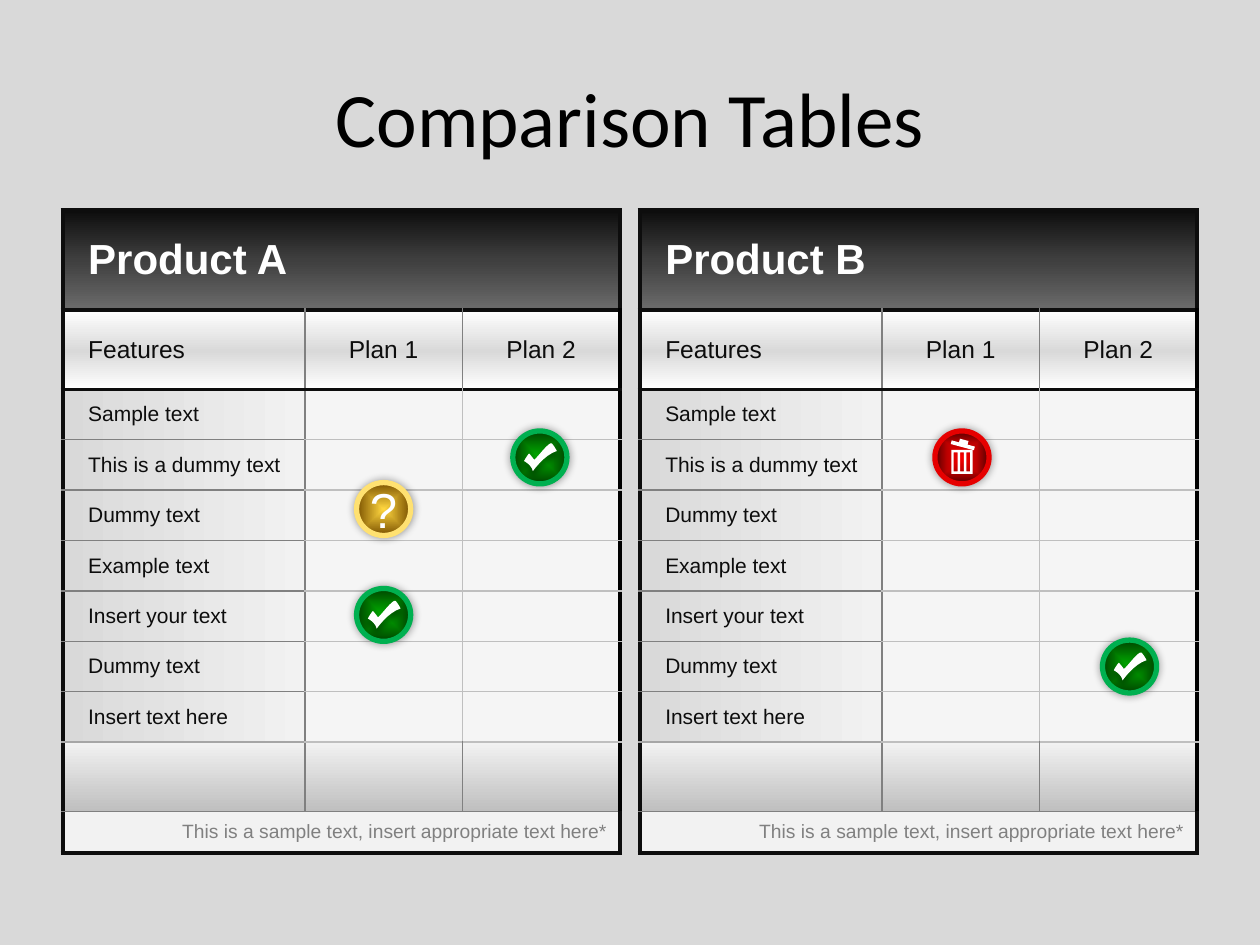
from dataclasses import dataclass
from typing import Any, NamedTuple

from lxml.etree import SubElement
from pptx import Presentation
from pptx.dml.color import RGBColor
from pptx.enum.shapes import MSO_SHAPE
from pptx.enum.text import MSO_ANCHOR, PP_ALIGN
from pptx.oxml import parse_xml
from pptx.oxml.ns import nsdecls, qn
from pptx.util import Inches, Pt


class Line(NamedTuple):
    color: str
    width: float


class Gradient(NamedTuple):
    stops: tuple
    angle: int | None = None  # None spreads from the centre


@dataclass(frozen=True)
class Theme:
    background: str = "D9D9D9"
    white: str = "FFFFFF"
    black: str = "000000"
    ink: str = "0D0D0D"
    gray: str = "808080"
    silver: str = "BFBFBF"
    plan_cell: str = "F5F5F5"
    footer: str = "F2F2F2"
    title_font: str = "Calibri"
    body_font: str = "Arial"
    title_size: int = 44
    product_size: int = 24
    heading_size: int = 14
    feature_size: int = 12
    note_size: int = 11
    mark_size: int = 28
    product: Gradient = Gradient(((0, "0D0D0D"), (50, "3F3F3F"), (100, "6B6B6B")), 90)
    heading: Gradient = Gradient(((0, "FFFFFF"), (52, "D9D9D9"), (100, "FFFFFF")), 90)
    feature: Gradient = Gradient(((0, "D9D9D9"), (100, "F2F2F2")), 0)
    summary: Gradient = Gradient(((0, "BFBFBF"), (100, "F2F2F2")), 270)


THEME = Theme()


class BadgeStyle(NamedTuple):
    fill: Gradient
    ring: str


class Badge(NamedTuple):
    kind: str
    left: float
    top: float


BADGE_STYLES = {
    "check": BadgeStyle(Gradient(((0, "00B000"), (100, "004300"))), "00B050"),
    "question": BadgeStyle(Gradient(((0, "FFD63F"), (100, "7A5100"))), "FFE171"),
    "trash": BadgeStyle(Gradient(((0, "FA0000"), (53, "BD0000"), (100, "540000"))), "E60000"),
}
BADGES = [Badge("trash", 7.42, 3.42), Badge("check", 2.83, 4.67), Badge("question", 2.83, 3.83),
          Badge("check", 4.07, 3.42), Badge("check", 8.75, 5.08)]
FEATURES = ["Sample text", "This is a dummy text", "Dummy text", "Example text",
            "Insert your text", "Dummy text", "Insert text here"]
NOTE = "This is a sample text, insert appropriate text here*"
COLUMN_WIDTHS = [1.92, 1.25, 1.25]
ROW_HEIGHTS = [0.79, 0.63] + [0.4] * len(FEATURES) + [0.55, 0.33]
LAST_ROW = len(ROW_HEIGHTS) - 1
SUMMARY_ROW = LAST_ROW - 1

# Outlines in inches from the badge corner; each curve is two controls and an end
CHECK_START = (0.09, 0.24)
CHECK_CURVES = [((0.09, 0.24), (0.15, 0.27), (0.16, 0.32)), ((0.16, 0.32), (0.25, 0.19), (0.35, 0.16)),
                ((0.35, 0.16), (0.33, 0.12), (0.31, 0.10)), ((0.29, 0.08), (0.19, 0.22), (0.17, 0.23)),
                ((0.17, 0.23), (0.15, 0.20), (0.13, 0.18)), ((0.13, 0.18), (0.11, 0.20), (0.09, 0.24))]
BIN_LID = [(0.13, 0.10), (0.19, 0.10), (0.19, 0.07), (0.26, 0.07),
           (0.26, 0.10), (0.32, 0.10), (0.32, 0.13), (0.13, 0.13)]


def apply_format(target: Any, values: dict) -> None:
    for name, value in values.items():
        setattr(target, name, value)


def fill_element(fill: str | Gradient):
    if isinstance(fill, str):
        return parse_xml(f'<a:solidFill {nsdecls("a")}><a:srgbClr val="{fill}"/></a:solidFill>')
    stops = "".join(f'<a:gs pos="{position * 1000}"><a:srgbClr val="{color}"/></a:gs>'
                    for position, color in fill.stops)
    if fill.angle is None:
        shade = '<a:path path="shape"><a:fillToRect l="50000" t="50000" r="50000" b="50000"/></a:path>'
    else:
        shade = f'<a:lin ang="{fill.angle * 60000}" scaled="0"/>'
    return parse_xml(f'<a:gradFill {nsdecls("a")} rotWithShape="1"><a:gsLst>{stops}</a:gsLst>{shade}</a:gradFill>')


def add_shadow(shape: Any, blur: float, distance: float, angle: int) -> None:
    shape.shadow.inherit = False
    effects = shape._element.spPr.find(qn("a:effectLst"))
    effects.append(parse_xml(
        f'<a:outerShdw {nsdecls("a")} blurRad="{Pt(blur)}" dist="{Pt(distance)}" dir="{angle * 60000}" '
        f'algn="ctr" rotWithShape="0"><a:srgbClr val="{THEME.black}"><a:alpha val="40000"/>'
        '</a:srgbClr></a:outerShdw>'))


def write_text(frame: Any, text: str, size: int, color: str, align=PP_ALIGN.LEFT,
               font: str = THEME.body_font, bold: bool = False) -> None:
    para = frame.paragraphs[0]
    para.alignment = align
    span = para.add_run()
    span.text = text
    apply_format(span.font, {"name": font, "size": Pt(size), "bold": bold})
    span.font.color.rgb = RGBColor.from_string(color)


def horizontal_line(edge: int, column: int) -> Line:
    """Rule above the row with this number."""
    if edge in (0, LAST_ROW + 1):
        return Line(THEME.ink, 3)
    if edge <= 2:
        return Line(THEME.ink, 2.25)
    if edge == LAST_ROW:
        return Line(THEME.gray, 1)
    if column > 0:
        return Line(THEME.silver, 1)
    return Line("A6A6A6" if edge == SUMMARY_ROW else THEME.gray, 1)


def vertical_line(edge: int, row: int) -> Line:
    """Rule left of the column with this number."""
    if edge == 0 or (edge == 3 and row in (0, LAST_ROW)):
        return Line(THEME.ink, 3)
    if edge == 3:
        return Line(THEME.black, 2.25)
    return Line(THEME.gray if edge == 1 or row in (1, SUMMARY_ROW) else THEME.silver, 1)


def style_cell(cell: Any, row: int, column: int, fill: str | Gradient) -> None:
    merged = row in (0, LAST_ROW)
    borders = {"lnL": vertical_line(0 if merged else column, row),
               "lnR": vertical_line(3 if merged else column + 1, row),
               "lnT": horizontal_line(row, column), "lnB": horizontal_line(row + 1, column)}
    properties = cell._tc.get_or_add_tcPr()
    for tag, line in borders.items():
        border = SubElement(properties, qn(f"a:{tag}"), w=str(Pt(line.width)))
        border.append(fill_element(line.color))
    properties.append(fill_element(fill))
    cell.vertical_anchor = MSO_ANCHOR.MIDDLE
    if column == 0 and row < SUMMARY_ROW:
        cell.margin_left = Inches(0.2)


def add_comparison(page: Any, left: float, product: str) -> None:
    frame = page.shapes.add_table(len(ROW_HEIGHTS), len(COLUMN_WIDTHS), Inches(left), Inches(1.67),
                                  Inches(sum(COLUMN_WIDTHS)), Inches(sum(ROW_HEIGHTS)))
    table = frame.table
    apply_format(table, {"first_row": False, "horz_banding": False})
    for column, width in zip(table.columns, COLUMN_WIDTHS):
        column.width = Inches(width)
    for row, height in zip(table.rows, ROW_HEIGHTS):
        row.height = Inches(height)
    fills = ([THEME.product, THEME.heading] + [THEME.feature] * len(FEATURES)
             + [THEME.summary, THEME.footer])
    texts = [[product], ["Features", "Plan 1", "Plan 2"], *[[name] for name in FEATURES], [], [NOTE]]
    for row, (fill, words) in enumerate(zip(fills, texts)):
        for column in range(len(COLUMN_WIDTHS)):
            cell = table.cell(row, column)
            plan_area = column > 0 and 2 <= row < SUMMARY_ROW
            style_cell(cell, row, column, THEME.plan_cell if plan_area else fill)
            if column >= len(words):  # keeps empty cells from stretching the row
                SubElement(cell.text_frame.paragraphs[0]._p, qn("a:endParaRPr"),
                           sz=str(THEME.feature_size * 100))
            elif row == 0:
                write_text(cell.text_frame, product, THEME.product_size, THEME.white, bold=True)
            elif row == LAST_ROW:
                write_text(cell.text_frame, NOTE, THEME.note_size, THEME.gray, PP_ALIGN.RIGHT)
            else:
                write_text(cell.text_frame, words[column],
                           THEME.heading_size if row == 1 else THEME.feature_size, THEME.ink,
                           PP_ALIGN.CENTER if column else PP_ALIGN.LEFT)
    for row in (0, LAST_ROW):
        table.cell(row, 0).merge(table.cell(row, 2))


def curve_points(start: tuple, curves: list, steps: int = 8) -> list:
    points = [start]
    for first, second, end in curves:
        begin = points[-1]
        for step in range(1, steps + 1):
            t = step / steps
            weights = ((1 - t) ** 3, 3 * t * (1 - t) ** 2, 3 * t * t * (1 - t), t ** 3)
            points.append(tuple(sum(w * p[axis] for w, p in zip(weights, (begin, first, second, end)))
                                for axis in (0, 1)))
    return points


def rectangle(left: float, top: float, right: float, bottom: float) -> list:
    return [(left, top), (right, top), (right, bottom), (left, bottom)]


def add_outline(shapes: Any, badge: Badge, contours: list) -> Any:
    placed = [[(Inches(badge.left + x), Inches(badge.top + y)) for x, y in points] for points in contours]
    builder = shapes.build_freeform(*placed[0][0])
    for number, points in enumerate(placed):
        if number:
            builder.move_to(*points[0])
        builder.add_line_segments(points[1:], close=True)
    outline = builder.convert_to_shape()
    outline.fill.solid()
    outline.fill.fore_color.rgb = RGBColor.from_string(THEME.white)
    outline.line.fill.background()
    outline.shadow.inherit = False
    return outline


def add_badge(page: Any, badge: Badge) -> None:
    style = BADGE_STYLES[badge.kind]
    shapes = page.shapes if badge.kind == "question" else page.shapes.add_group_shape().shapes
    disc = shapes.add_shape(MSO_SHAPE.OVAL, Inches(badge.left), Inches(badge.top), Inches(0.43), Inches(0.42))
    disc.fill.solid()
    solid = disc._element.spPr.find(qn("a:solidFill"))
    solid.getparent().replace(solid, fill_element(style.fill))
    disc.line.color.rgb = RGBColor.from_string(style.ring)
    disc.line.width = Pt(3)
    add_shadow(disc, 5, 0, 0)
    if badge.kind == "question":
        apply_format(disc.text_frame, {"margin_left": 0, "margin_right": 0, "margin_top": 0,
                                       "margin_bottom": 0, "vertical_anchor": MSO_ANCHOR.MIDDLE})
        write_text(disc.text_frame, "?", THEME.mark_size, THEME.white, PP_ALIGN.CENTER)
    elif badge.kind == "check":
        add_shadow(add_outline(shapes, badge, [curve_points(CHECK_START, CHECK_CURVES)]), 4, 3, 90)
    else:
        slots = [rectangle(x, 0.17, x + 0.03, 0.32) for x in (0.15, 0.20, 0.25)]
        add_outline(shapes, badge, [rectangle(0.13, 0.15, 0.30, 0.34), *slots])
        add_outline(shapes, badge, [BIN_LID]).rotation = 15


def main() -> None:
    deck = Presentation()
    apply_format(deck, {"slide_width": Inches(10), "slide_height": Inches(7.5)})
    page = deck.slides.add_slide(deck.slide_layouts[5])
    page.background.fill.solid()
    page.background.fill.fore_color.rgb = RGBColor.from_string(THEME.background)

    # Title
    title = page.shapes.title
    apply_format(title, {"left": Inches(0.5), "top": Inches(0.3), "width": Inches(9), "height": Inches(1.25)})
    title.text_frame.vertical_anchor = MSO_ANCHOR.MIDDLE
    write_text(title.text_frame, "Comparison Tables", THEME.title_size, THEME.black,
               PP_ALIGN.CENTER, THEME.title_font)

    # Tables, then the badges on top of them
    for left, product in ((0.5, "Product A"), (5.08, "Product B")):
        add_comparison(page, left, product)
    for badge in BADGES:
        add_badge(page, badge)
    deck.save("out.pptx")


if __name__ == "__main__":
    main()
